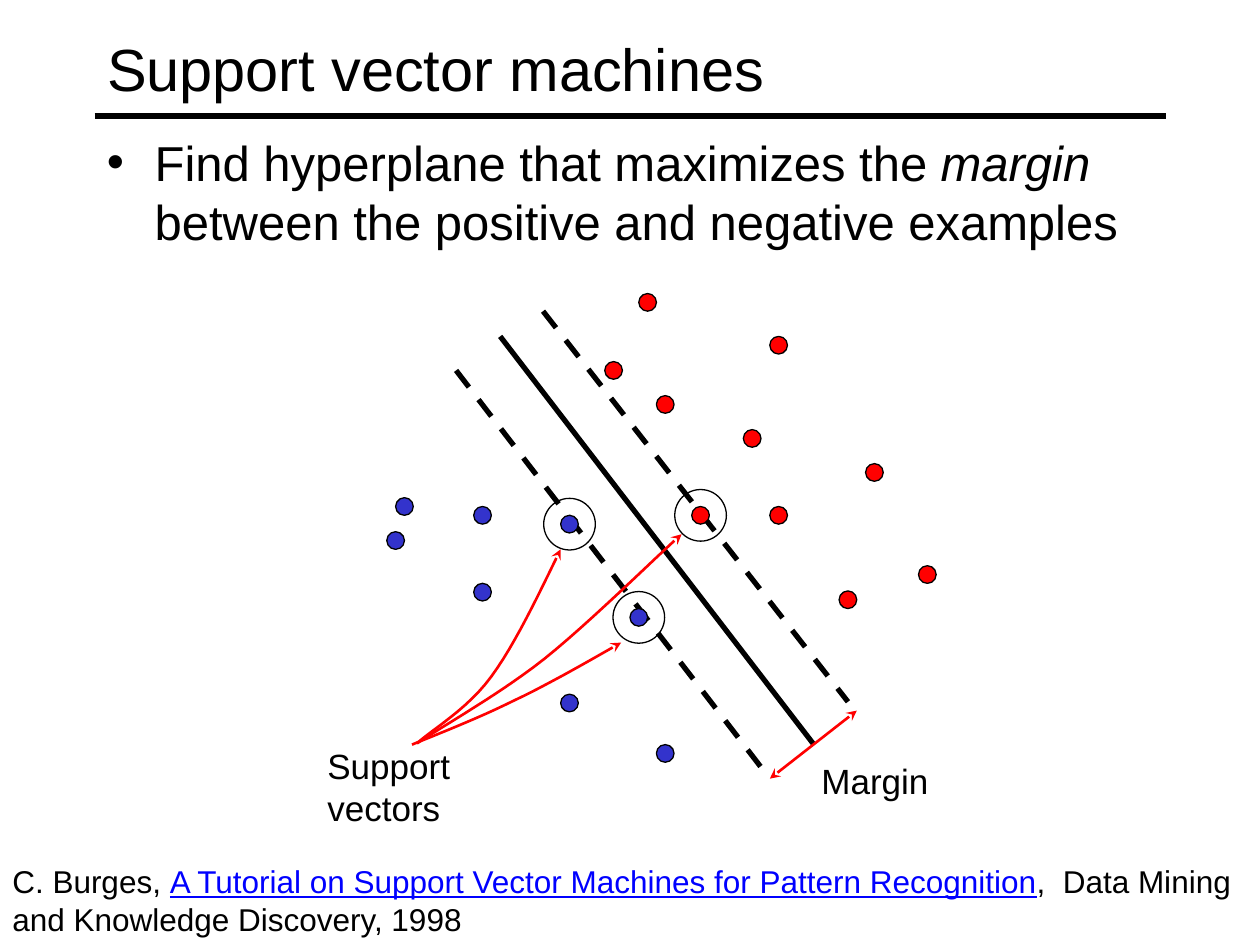
from lxml.etree import SubElement
from pptx import Presentation
from pptx.dml.color import RGBColor as RGB
from pptx.enum.dml import MSO_LINE_DASH_STYLE as Dash
from pptx.enum.shapes import MSO_CONNECTOR as Connector, MSO_SHAPE as Preset
from pptx.enum.text import MSO_ANCHOR as Anchor, PP_ALIGN as Align
from pptx.oxml.ns import qn
from pptx.util import Inches, Pt

THEME = {
    "font": "Arial",
    "ink": "000000", "positive": "FF0000", "negative": "3333CC",
    "accent": "FF0000", "link": "0000FF",
    "title": 34, "body": 28, "label": 20, "citation": 18,
    "heavy": 3, "arrow": 1.5, "outline": 0.75,
}

TITLE = [("Support vector machines", {})]
STATEMENT = [
    ("Find hyperplane that maximizes the ", {}),
    ("margin ", {"italic": True}),
    ("between the positive and negative examples", {}),
]
CITATION = [
    ("C. Burges, ", {}),
    ("A Tutorial on Support Vector Machines for Pattern Recognition",
     {"underline": True, "color": "link"}),
    (",  Data Mining and Knowledge Discovery, 1998", {}),
]
LABELS = [
    ("Margin", (6.42, 5.98, 1.05, 0.43), False),
    ("Support vectors", (2.5, 5.86, 1.3, 0.75), True),
]

EXAMPLES = {
    "negative": [(3.21, 4.02), (3.83, 4.09), (3.83, 4.7), (3.14, 4.29),
                 (4.52, 5.58), (5.28, 5.98), (4.52, 4.16), (5.07, 4.9)],
    "positive": [(5.28, 3.21), (5.97, 3.48), (6.18, 4.09), (4.87, 2.94),
                 (6.73, 4.76), (6.94, 3.75), (6.18, 2.74), (7.36, 4.56),
                 (5.14, 2.4), (5.56, 4.09)],
}
SUPPORT_VECTORS = [(4.52, 4.16), (5.56, 4.09), (5.07, 4.9)]
EXAMPLE_SIZE, RING_SIZE = 0.14, 0.41

TITLE_RULE = ((0.75, 0.92), (9.25, 0.92))
HYPERPLANE = ((3.97, 2.67), (6.46, 5.91))
MARGIN_EDGES = [((3.62, 2.94), (6.11, 6.18)), ((4.31, 2.47), (6.73, 5.57))]
MARGIN_SPAN = ((6.11, 6.18), (6.8, 5.64))
POINTERS = [
    [(4.45, 4.36), (4.27, 4.73), (4.09, 5.11), (3.9, 5.37),
     (3.71, 5.63), (3.43, 5.79), (3.31, 5.9)],
    [(4.93, 5.1), (4.79, 5.18), (4.36, 5.43), (4.08, 5.56),
     (3.8, 5.7), (3.44, 5.84), (3.27, 5.91)],
    [(5.41, 4.24), (5.23, 4.4), (4.66, 4.96), (4.32, 5.23),
     (3.98, 5.5), (3.52, 5.76), (3.31, 5.9)],
]
CURVE_STEPS = 12


def color(role):
    return RGB.from_string(THEME[role])


def assign(target, values):
    for key, value in values.items():
        setattr(target, key, value)


def write(frame, runs, size, **frame_format):
    assign(frame, frame_format)
    paragraph = frame.paragraphs[0]
    paragraph.alignment = Align.LEFT
    for wording, emphasis in runs:
        run = paragraph.add_run()
        run.text = wording
        font_format = {"name": THEME["font"], "size": Pt(THEME[size]), **emphasis}
        run.font.color.rgb = color(font_format.pop("color", "ink"))
        assign(run.font, font_format)
    return paragraph


def add_text(slide, box, runs, size, wrap=True):
    frame = slide.shapes.add_textbox(*map(Inches, box)).text_frame
    return write(frame, runs, size, word_wrap=wrap)


def style_line(line, role, weight, ends=()):
    line.color.rgb = color(role)
    line.width = Pt(THEME[weight])
    for end in ends:
        SubElement(line._get_or_add_ln(), qn(f"a:{end}"), type="stealth")


def add_line(slide, ends, role="ink", weight="heavy", dash=None, arrows=()):
    start, finish = ends
    connector = slide.shapes.add_connector(
        Connector.STRAIGHT, *map(Inches, (*start, *finish)))
    if dash:
        connector.line.dash_style = dash
    style_line(connector.line, role, weight, arrows)
    SubElement(connector._element.spPr, qn("a:effectLst"))


def add_circle(slide, center, size, fill=None):
    x, y = center
    circle = slide.shapes.add_shape(
        Preset.OVAL, *map(Inches, (x - size / 2, y - size / 2, size, size)))
    circle.shadow.inherit = False
    if fill:
        circle.fill.solid()
        circle.fill.fore_color.rgb = color(fill)
    else:
        circle.fill.background()
    style_line(circle.line, "ink", "outline")


def bezier(controls, t):
    weights = ((1 - t) ** 3, 3 * t * (1 - t) ** 2, 3 * t * t * (1 - t), t ** 3)
    return tuple(sum(w * p[axis] for w, p in zip(weights, controls))
                 for axis in (0, 1))


def add_pointer(slide, controls):
    points = [bezier(controls[first:first + 4], step / CURVE_STEPS)
              for first in range(0, len(controls) - 1, 3)
              for step in range(1, CURVE_STEPS + 1)]
    builder = slide.shapes.build_freeform(*map(Inches, controls[0]), scale=1.0)
    builder.add_line_segments([tuple(map(Inches, p)) for p in points], close=False)
    pointer = builder.convert_to_shape()
    pointer.shadow.inherit = False
    pointer.fill.background()
    style_line(pointer.line, "accent", "arrow", ["headEnd"])


def add_heading(slide):
    title = slide.shapes.title
    box = dict(zip(("left", "top", "width", "height"),
                   map(Inches, (0.75, 0.08, 8.5, 0.92))))
    assign(title, box)
    write(title.text_frame, TITLE, "title", vertical_anchor=Anchor.MIDDLE)
    add_line(slide, TITLE_RULE)


def add_statement(slide):
    statement = add_text(slide, (0.75, 1, 8.5, 5.75), STATEMENT, "body")
    statement.space_before = Pt(0.2 * THEME["body"])
    properties = statement._p.get_or_add_pPr()
    properties.set("marL", str(Inches(0.38)))
    properties.set("indent", str(-Inches(0.38)))
    SubElement(properties, qn("a:buFont"), typeface=THEME["font"])
    SubElement(properties, qn("a:buChar"), char="•")


def add_diagram(slide):
    add_line(slide, HYPERPLANE)
    for edge in MARGIN_EDGES:
        add_line(slide, edge, dash=Dash.DASH)
    for kind, centers in EXAMPLES.items():
        for center in centers:
            add_circle(slide, center, EXAMPLE_SIZE, kind)
    add_line(slide, MARGIN_SPAN, "accent", "arrow", arrows=["headEnd", "tailEnd"])
    for controls in POINTERS:
        add_pointer(slide, controls)
    for center in SUPPORT_VECTORS:
        add_circle(slide, center, RING_SIZE)
    for wording, box, wrap in LABELS:
        add_text(slide, box, [(wording, {})], "label", wrap)


def main():
    deck = Presentation()
    assign(deck, {"slide_width": Inches(10), "slide_height": Inches(7.5)})
    slide = deck.slides.add_slide(deck.slide_layouts[5])
    add_heading(slide)
    add_statement(slide)
    add_diagram(slide)
    add_text(slide, (0, 6.79, 10, 0.7), CITATION, "citation")
    deck.save("out.pptx")


if __name__ == "__main__":
    main()
